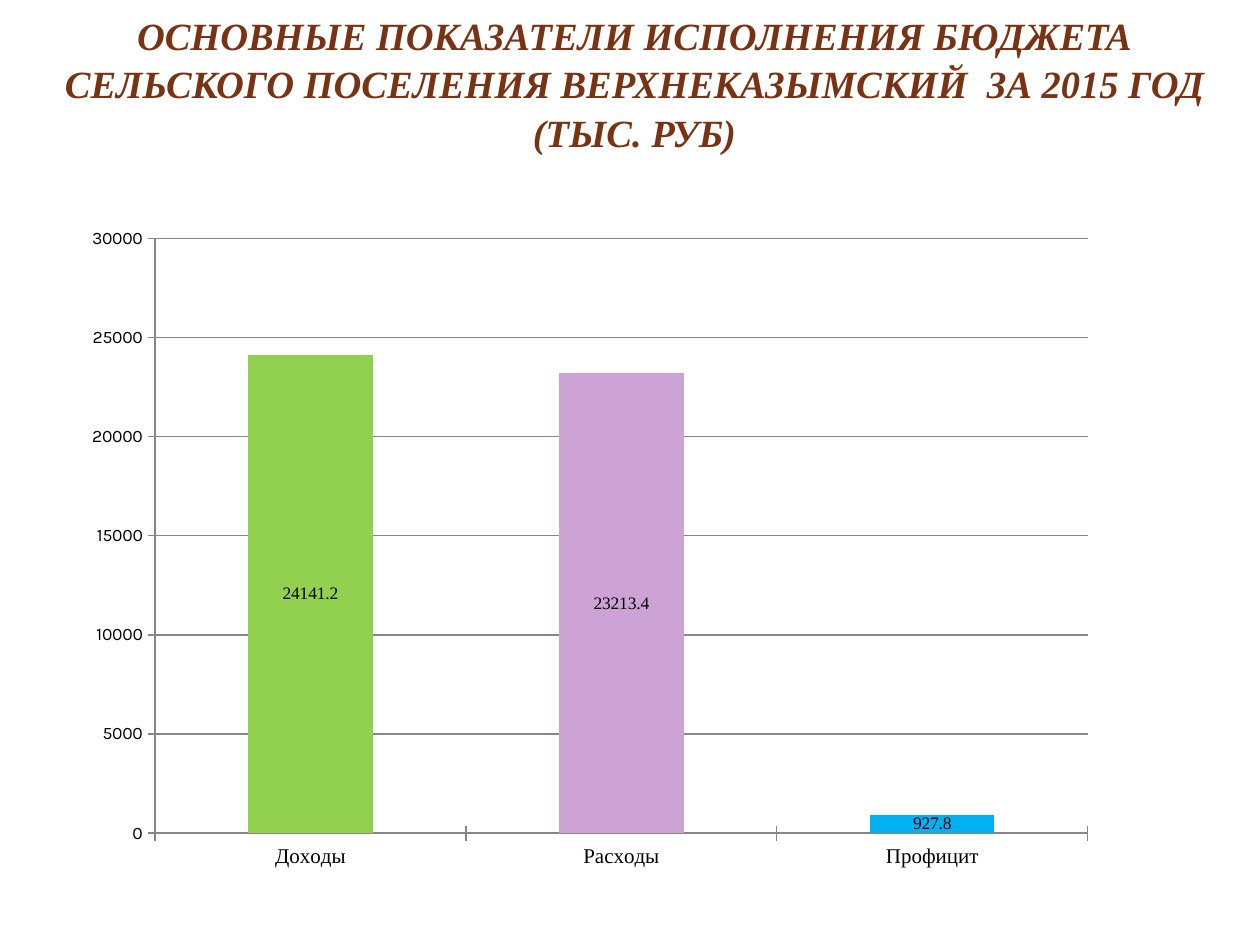
from lxml import etree
from pptx import Presentation
from pptx.chart.data import CategoryChartData
from pptx.dml.color import RGBColor
from pptx.enum.chart import XL_CHART_TYPE as ChartType, XL_LABEL_POSITION as LabelPos
from pptx.enum.chart import XL_TICK_MARK as Tick
from pptx.enum.text import MSO_ANCHOR as Anchor, PP_ALIGN as Align
from pptx.oxml.ns import qn
from pptx.util import Pt

# Content
TITLE = [
    "ОСНОВНЫЕ ПОКАЗАТЕЛИ ИСПОЛНЕНИЯ БЮДЖЕТА "
    "СЕЛЬСКОГО ПОСЕЛЕНИЯ ВЕРХНЕКАЗЫМСКИЙ  ЗА 2015 ГОД",
    "(ТЫС. РУБ)",
]
BUDGET = [
    ("Доходы", 24141.2, "income"),
    ("Расходы", 23213.4, "expenses"),
    ("Профицит", 927.8, "surplus"),
]
COLORS = {
    "title": "773313", "text": "000000", "line": "878787",
    "income": "92D050", "expenses": "CDA3D6", "surplus": "00B0F0",
}
SERIF, SANS = "Times New Roman", "Karla"
PLOT = {"x": 0.11, "y": 0.075, "w": 0.855, "h": 0.833}  # shares of the chart frame

PX = 914400 // 126
TITLE_BOX = (44, 26, 1181, 129)
CHART_BOX = (35, 185, 1091, 714)


def px(*lengths):
    return [length * PX for length in lengths]


def color(name):
    return RGBColor.from_string(COLORS[name])


def style_font(font, name, size, color_name):
    font.name, font.size = name, Pt(size)
    font.color.rgb = color(color_name)


def style_line(line):
    line.color.rgb = color("line")
    line.width = Pt(0.75)


def set_plot_layout(chart):
    area = chart._chartSpace.chart.plotArea
    for old in area.findall(qn("c:layout")):
        area.remove(old)
    layout = etree.Element(qn("c:layout"))
    area.insert(0, layout)
    manual = etree.SubElement(layout, qn("c:manualLayout"))
    settings = {"layoutTarget": "inner", "xMode": "edge", "yMode": "edge", **PLOT}
    for tag, value in settings.items():
        etree.SubElement(manual, qn("c:" + tag)).set("val", str(value))


prs = Presentation()
prs.slide_width, prs.slide_height = px(1260, 945)
slide = prs.slides.add_slide(prs.slide_layouts[6])

# Title
frame = slide.shapes.add_textbox(*px(*TITLE_BOX)).text_frame
frame.word_wrap = True
frame.vertical_anchor = Anchor.BOTTOM
frame.margin_left, frame.margin_right = px(6, 6)
frame.margin_top = frame.margin_bottom = 0
heading = frame.paragraphs[0]
heading.alignment = Align.CENTER
heading.line_spacing = 1.05
for i, line in enumerate(TITLE):
    if i:
        heading.add_line_break()
    run = heading.add_run()
    run.text = line
    style_font(run.font, SERIF, 22, "title")
    run.font.bold = run.font.italic = True

# Budget chart
data = CategoryChartData(number_format="General")
data.categories = [name for name, _, _ in BUDGET]
data.add_series("Series 1", [value for _, value, _ in BUDGET])
chart = slide.shapes.add_chart(
    ChartType.COLUMN_STACKED, *px(*CHART_BOX), data).chart
chart.has_legend = chart.has_title = False
style_font(chart.font, SANS, 10, "text")
set_plot_layout(chart)

# Columns and their values
plot = chart.plots[0]
plot.vary_by_categories = False
plot.gap_width, plot.overlap = 150, 100
columns = plot.series[0]
for i, (_, _, fill_name) in enumerate(BUDGET):
    fill = columns.points[i].format.fill
    fill.solid()
    fill.fore_color.rgb = color(fill_name)
labels = columns.data_labels
labels.show_value = True
labels.position = LabelPos.CENTER
style_font(labels.font, SERIF, 10, "text")

# Axes
amounts, names = chart.value_axis, chart.category_axis
for axis in (amounts, names):
    axis.major_tick_mark, axis.minor_tick_mark = Tick.CROSS, Tick.NONE
    style_line(axis.format.line)
style_font(names.tick_labels.font, SERIF, 12, "text")
amounts.minimum_scale, amounts.maximum_scale, amounts.major_unit = 0, 30000, 5000
amounts.has_major_gridlines = True
style_line(amounts.major_gridlines.format.line)

prs.save("out.pptx")
